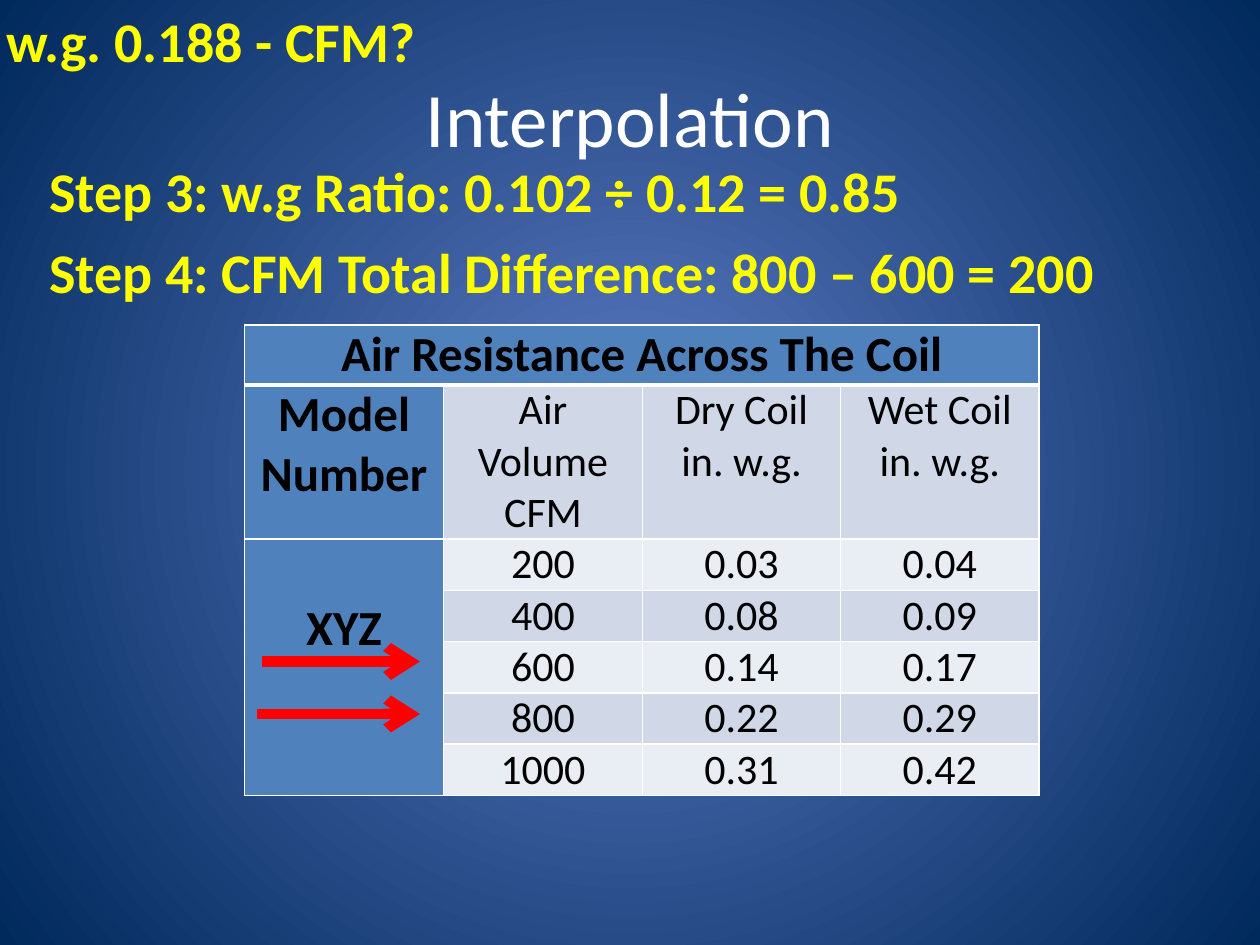
from lxml.etree import SubElement
from pptx import Presentation
from pptx.dml.color import RGBColor
from pptx.enum.shapes import MSO_CONNECTOR as Connector
from pptx.enum.text import MSO_ANCHOR as Anchor, MSO_AUTO_SIZE as AutoSize, PP_ALIGN as Align
from pptx.oxml import parse_xml
from pptx.oxml.ns import nsdecls, qn
from pptx.util import Pt

YELLOW, WHITE, BLACK, RED = "FFFF00", "FFFFFF", "000000", "FF0000"
HEADER_BLUE, BANDS = "4F81BD", ("D0D8E8", "E9EDF4")
COLUMN_WIDTHS = (113.75, 113.75, 113.25, 113.25)
ROW_HEIGHTS = (34, 88) + (29.3,) * 5
COIL_ROWS = (
    ("Air Resistance Across The Coil", "", "", ""),
    ("Model Number", "Air Volume CFM", "Dry Coil in. w.g.", "Wet Coil in. w.g."),
    ("XYZ", "200", "0.03", "0.04"),
    ("", "400", "0.08", "0.09"),
    ("", "600", "0.14", "0.17"),
    ("", "800", "0.22", "0.29"),
    ("", "1000", "0.31", "0.42"),
)


def color(code):
    return RGBColor.from_string(code)


def set_all(target, values):
    for key, value in values.items():
        setattr(target, key, value)


def write(frame, text, size, code, bold=False, align=Align.LEFT):
    paragraph = frame.paragraphs[0]
    paragraph.alignment = align
    run = paragraph.add_run()
    run.text = text
    set_all(run.font, {"name": "Calibri", "size": Pt(size), "bold": bold})
    run.font.color.rgb = color(code)


def paint_background(slide):
    fill = slide.background.fill
    fill.gradient()
    for stop, (position, code) in zip(fill.gradient_stops, ((0, "5E7CC5"), (1, "00295C"))):
        stop.position = position
        stop.color.rgb = color(code)
    linear = next(slide.background._cSld.iter(qn("a:lin")))
    linear.getparent().replace(linear, parse_xml(
        f'<a:path {nsdecls("a")} path="circle">'
        '<a:fillToRect l="50000" t="50000" r="50000" b="50000"/></a:path>'))


def add_title(slide, text):
    title = slide.shapes.title
    set_all(title, {"left": Pt(36), "top": Pt(21.6), "width": Pt(648), "height": Pt(90)})
    title.text_frame.vertical_anchor = Anchor.MIDDLE
    write(title.text_frame, text, 44, WHITE, align=Align.CENTER)


def add_note(slide, text, left, top, width, wrap=True):
    frame = slide.shapes.add_textbox(Pt(left), Pt(top), Pt(width), Pt(46)).text_frame
    set_all(frame, {"word_wrap": wrap, "auto_size": AutoSize.SHAPE_TO_FIT_TEXT})
    write(frame, text, 32, YELLOW, bold=True)


def add_borders(cell, widths):
    properties = cell._tc.get_or_add_tcPr()
    for index, (side, width) in enumerate(widths.items()):
        properties.insert(index, parse_xml(
            f'<a:ln{side} {nsdecls("a")} w="{Pt(width)}"><a:solidFill>'
            f'<a:srgbClr val="{WHITE}"/></a:solidFill></a:ln{side}>'))


def add_coil_table(slide, left, top):
    table = slide.shapes.add_table(
        len(ROW_HEIGHTS), len(COLUMN_WIDTHS), Pt(left), Pt(top),
        Pt(sum(COLUMN_WIDTHS)), Pt(sum(ROW_HEIGHTS))).table
    for column, width in zip(table.columns, COLUMN_WIDTHS):
        column.width = Pt(width)
    for row, height in zip(table.rows, ROW_HEIGHTS):
        row.height = Pt(height)
    table.cell(0, 0).merge(table.cell(0, 3))
    table.cell(2, 0).merge(table.cell(6, 0))
    for r, values in enumerate(COIL_ROWS):
        for c, value in enumerate(values):
            cell = table.cell(r, c)
            heading = r == 0 or c == 0
            set_all(cell, {
                "margin_left": Pt(5), "margin_right": Pt(5), "margin_bottom": Pt(0),
                "margin_top": Pt(34 if value == "XYZ" else 0)})
            cell.fill.solid()
            cell.fill.fore_color.rgb = color(HEADER_BLUE if heading else BANDS[(r + 1) % 2])
            add_borders(cell, {"L": 1, "R": 1, "T": 3 if r == 1 else 1, "B": 3 if r == 0 else 1})
            if value:
                write(cell.text_frame, value, 28 if heading else 24, BLACK, heading, Align.CENTER)


def add_arrow(slide, start, end, y):
    arrow = slide.shapes.add_connector(Connector.STRAIGHT, Pt(start), Pt(y), Pt(end), Pt(y))
    arrow.line.width = Pt(6)
    arrow.line.color.rgb = color(RED)
    SubElement(arrow.line._get_or_add_ln(), qn("a:tailEnd"), type="arrow")
    SubElement(arrow._element.spPr, qn("a:effectLst"))


def main():
    presentation = Presentation()
    set_all(presentation, {"slide_width": Pt(720), "slide_height": Pt(540)})
    slide = presentation.slides.add_slide(presentation.slide_layouts[5])
    paint_background(slide)
    add_title(slide, "Interpolation")
    add_coil_table(slide, 139.7, 185.8)
    add_note(slide, "Step 4: CFM Total Difference: 800 – 600 = 200", 21, 132, 651)
    add_note(slide, "Step 3: w.g Ratio: 0.102 ÷ 0.12 = 0.85", 21, 85.7, 570)
    for start, y in ((150, 378), (147, 408)):
        add_arrow(slide, start, 240, y)
    add_note(slide, "w.g. 0.188 - CFM?", -3.6, 0, 251.3, wrap=False)
    presentation.save("out.pptx")


if __name__ == "__main__":
    main()
